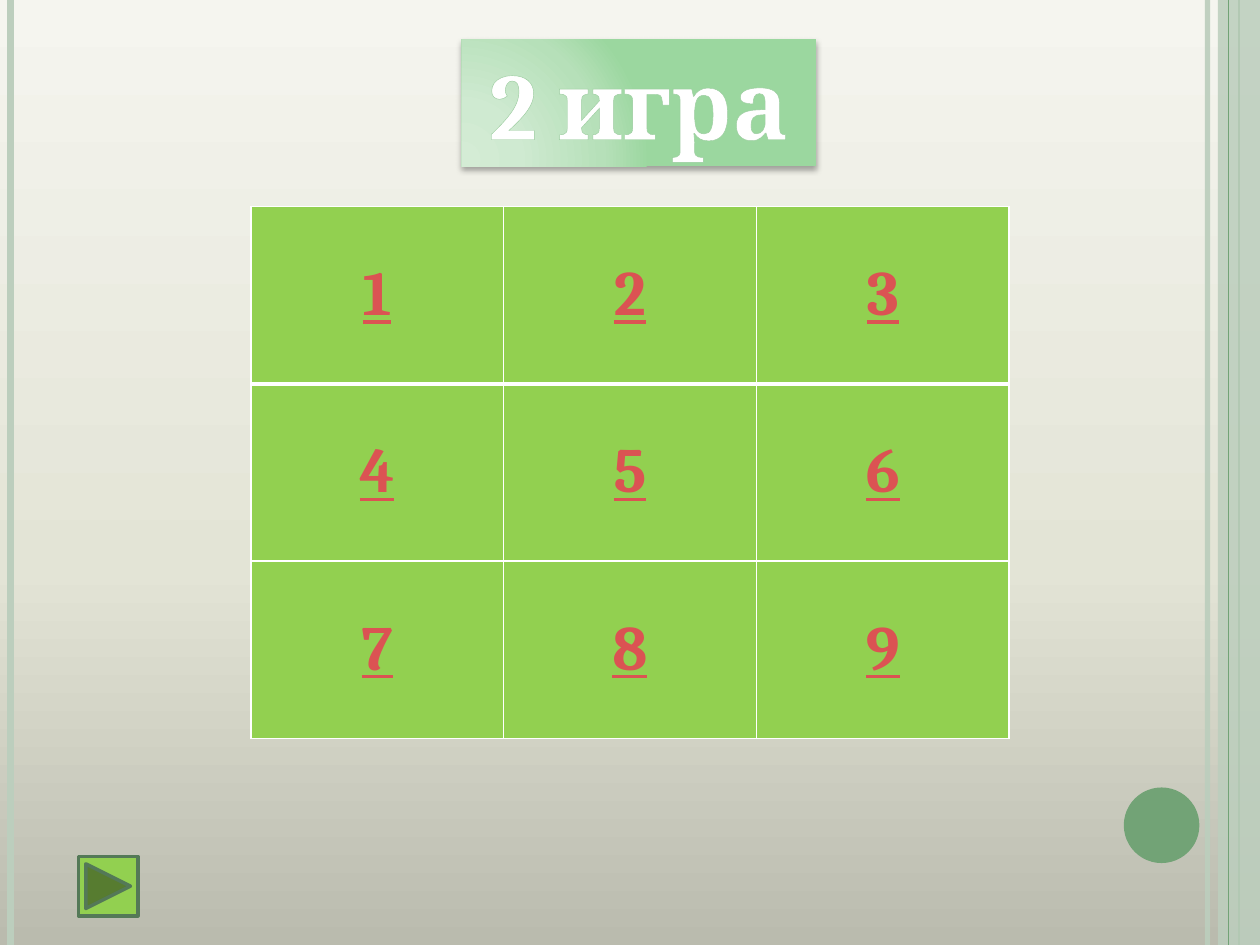
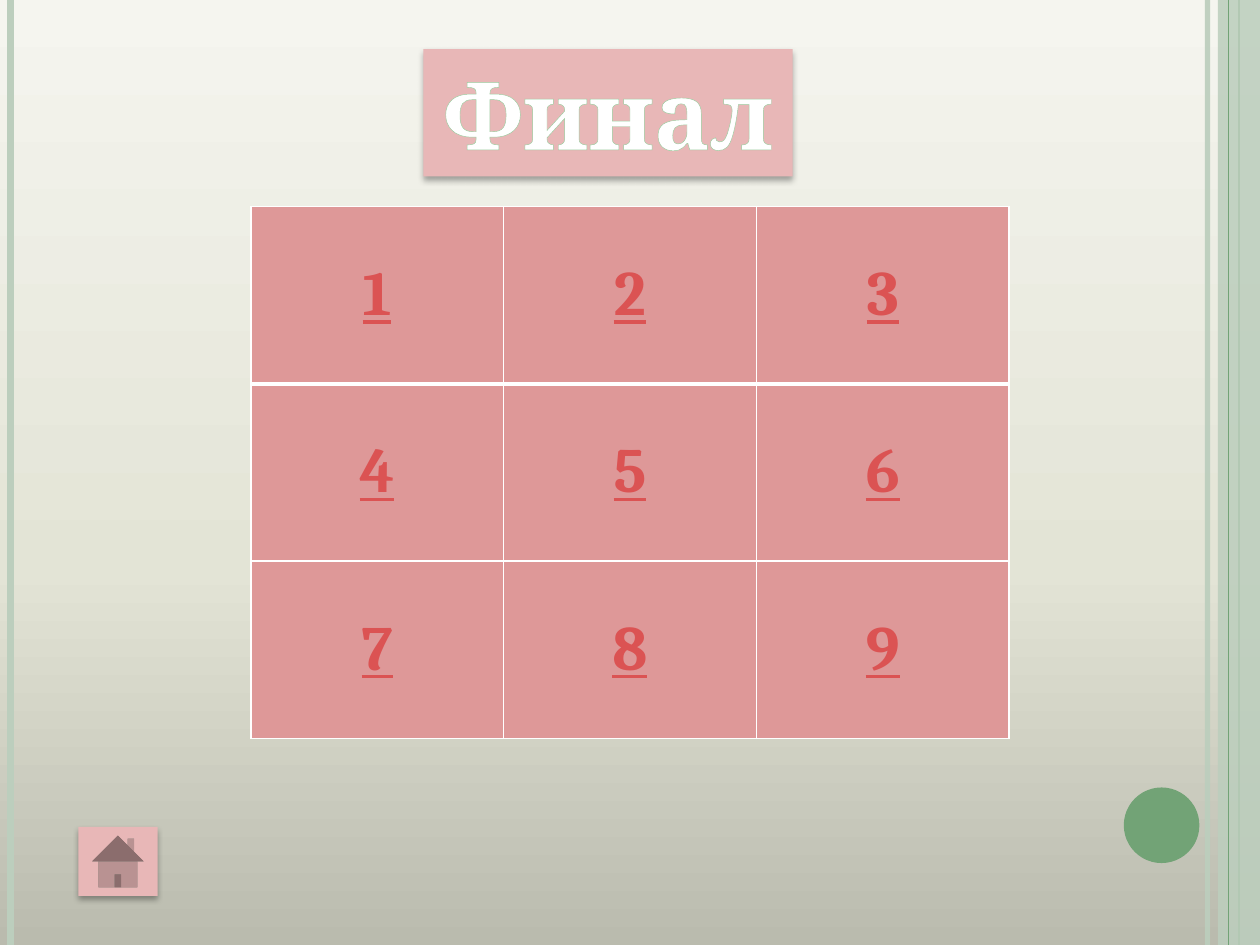
import pptx
import pptx.util
import pptx.dml.color
import pptx.enum.shapes
import pptx.enum.text
import pptx.oxml
import pptx.oxml.ns

Pt = pptx.util.Pt
RGB = pptx.dml.color.RGBColor
Kind = pptx.enum.shapes.MSO_SHAPE
Text = pptx.enum.text
qn = pptx.oxml.ns.qn

WIDE, HIGH = 720, 540
WHITE = RGB(0xFF, 0xFF, 0xFF)
BLACK = RGB(0x00, 0x00, 0x00)
PALE = RGB(0xBC, 0xCE, 0xBD)
GREEN = RGB(0x72, 0xA3, 0x76)
DARK = RGB(0x54, 0x79, 0x57)
EDGE = RGB(0x99, 0xCB, 0x9D)
LIME = RGB(0x92, 0xD0, 0x50)
ROSE = RGB(0xDE, 0x98, 0x98)
PINK = RGB(0xE8, 0xB7, 0xB7)
RED = RGB(0xDB, 0x53, 0x53)
PAPER = [(0, RGB(0xBA, 0xBB, 0xAE)), (40, RGB(0xE3, 0xE4, 0xD6)),
         (100, RGB(0xF5, 0xF5, 0xEF))]
MINT = [(0, RGB(0xD4, 0xEC, 0xD5)), (30, RGB(0xCF, 0xEA, 0xD1)),
        (75, RGB(0xB6, 0xE0, 0xB9)), (100, RGB(0x9B, 0xD7, 0x9F))]
UPWARD = '<a:lin ang="16200000" scaled="0"/>'
CORNER = ('<a:path path="circle"><a:fillToRect l="5000" t="100000" '
          'r="120000" b="10000"/></a:path>')

BASE = {"name": "Cambria", "bold": True}
HEAD = {**BASE, "size": Pt(54)}
DIGIT = {**BASE, "size": Pt(36), "underline": True}


def node(text):
    """Build a drawing element, adding its namespace to the first tag."""
    tag, rest = text.split(" ", 1)
    return pptx.oxml.parse_xml(f"{tag} {pptx.oxml.ns.nsdecls('a')} {rest}")


def stroke(tag, width, color):
    """Build a solid line element such as a border or a text outline."""
    return node(f'<a:{tag} w="{Pt(width)}"><a:solidFill>'
                f'<a:srgbClr val="{color}"/></a:solidFill></a:{tag}>')


def fade(root, part):
    """Set the opacity, in percent, of the first colour under root."""
    color = root.find(f".//{qn('a:srgbClr')}")
    color.append(node(f'<a:alpha val="{part * 1000}"/>'))


def blend(fill, root, stops, course):
    """Give the fill found under root a gradient of any number of stops."""
    fill.gradient()
    old = root.find(f".//{qn('a:gradFill')}")
    marks = "".join(f'<a:gs pos="{at * 1000}"><a:srgbClr val="{color}"/></a:gs>'
                    for at, color in stops)
    new = node(f'<a:gradFill rotWithShape="1"><a:gsLst>{marks}</a:gsLst>'
               f'{course}</a:gradFill>')
    old.getparent().replace(old, new)


class Deck:
    def __init__(self):
        self.show = pptx.Presentation()
        self.show.slide_width, self.show.slide_height = Pt(WIDE), Pt(HIGH)
        self.slide = None

    def page(self):
        """Start a slide with its background and side bands."""
        self.slide = self.show.slides.add_slide(self.show.slide_layouts[6])
        blend(self.slide.background.fill, self.slide.element, PAPER, UPWARD)
        self.rule(690, PALE, 3, 93)
        self.rule(6, PALE, 4.5)
        self.rule(708, GREEN, 1.5)
        band = self.shape(Kind.RECTANGLE, (696, 0, 24, HIGH), PALE)
        fade(band.element, 87)
        self.rule(702, GREEN, 0.75)
        self.shape(Kind.OVAL, (642.2, 450, 43.2, 43.2), GREEN)

    def rule(self, x, color, width, part=100):
        """Draw an upright line over the full height."""
        line = self.slide.shapes.add_connector(
            pptx.enum.shapes.MSO_CONNECTOR.STRAIGHT, Pt(x), 0, Pt(x), Pt(HIGH))
        line.line.color.rgb, line.line.width = color, Pt(width)
        props = line.element.spPr
        if part < 100:
            fade(props, part)
        props.append(node("<a:effectLst />"))

    def shape(self, kind, box, paint, edge=None, shade=False):
        """Draw a preset shape; paint is a colour or a list of stops."""
        form = self.slide.shapes.add_shape(kind, *map(Pt, box))
        form.shadow.inherit = False
        if isinstance(paint, list):
            blend(form.fill, form.element.spPr, paint, CORNER)
        else:
            form.fill.solid()
            form.fill.fore_color.rgb = paint
        if edge:
            form.line.color.rgb, form.line.width = edge, Pt(2)
        else:
            form.line.fill.background()
        if shade:
            form.element.spPr.find(qn("a:effectLst")).append(node(
                f'<a:outerShdw blurRad="{Pt(3.5)}" dist="{Pt(2.2)}" '
                f'dir="5400000" rotWithShape="0"><a:srgbClr val="{BLACK}">'
                '<a:alpha val="32000"/></a:srgbClr></a:outerShdw>'))
        return form

    def label(self, para, words, style, color):
        """Put one centred, formatted run in a paragraph."""
        para.alignment = Text.PP_ALIGN.CENTER
        run = para.add_run()
        run.text = words
        for key, value in style.items():
            setattr(run.font, key, value)
        run.font.color.rgb = color
        return run

    def title(self, words, box, paint, wrap):
        """Draw the title plate with outlined letters."""
        frame = self.shape(Kind.RECTANGLE, box, paint, shade=True).text_frame
        looks = {"word_wrap": wrap, "vertical_anchor": Text.MSO_ANCHOR.TOP,
                 "auto_size": Text.MSO_AUTO_SIZE.SHAPE_TO_FIT_TEXT}
        for key, value in looks.items():
            setattr(frame, key, value)
        run = self.label(frame.paragraphs[0], words, HEAD, WHITE)
        run._r.get_or_add_rPr().insert(0, stroke("ln", 2.48, EDGE))

    def board(self, paint, count=3, wide=144.48, high=101.3):
        """Draw the square board of numbered cells."""
        left = (WIDE - count * wide) / 2
        table = self.slide.shapes.add_table(
            count, count, Pt(left), Pt(118.1),
            Pt(count * wide), Pt(count * high)).table
        table.first_row = table.horz_banding = False
        for place, cell in enumerate(table.iter_cells()):
            row = place // count
            cell.vertical_anchor = Text.MSO_ANCHOR.MIDDLE
            cell.fill.solid()
            cell.fill.fore_color.rgb = paint
            self.label(cell.text_frame.paragraphs[0], str(place + 1), DIGIT, RED)
            # Thick rule under the first row
            sides = {"lnL": 1, "lnR": 1, "lnT": 3 if row == 1 else 1,
                     "lnB": 3 if row == 0 else 1}
            props = cell._tc.get_or_add_tcPr()
            for spot, (side, width) in enumerate(sides.items()):
                props.insert(spot, stroke(side, width, WHITE))


def main():
    deck = Deck()

    # Second game
    deck.page()
    deck.board(LIME)
    deck.title("2 игра", (264, 22.3, 202.3, 72.7), MINT, True)
    deck.shape(Kind.ACTION_BUTTON_FORWARD_OR_NEXT, (44.8, 489.4, 34, 34),
               LIME, edge=DARK)

    # Final
    deck.page()
    deck.board(ROSE)
    deck.title("Финал", (241.9, 28.1, 211, 72.7), PINK, False)
    deck.shape(Kind.ACTION_BUTTON_HOME, (44.8, 472.5, 45.2, 39.5),
               PINK, shade=True)

    deck.show.save("out.pptx")


if __name__ == "__main__":
    main()
